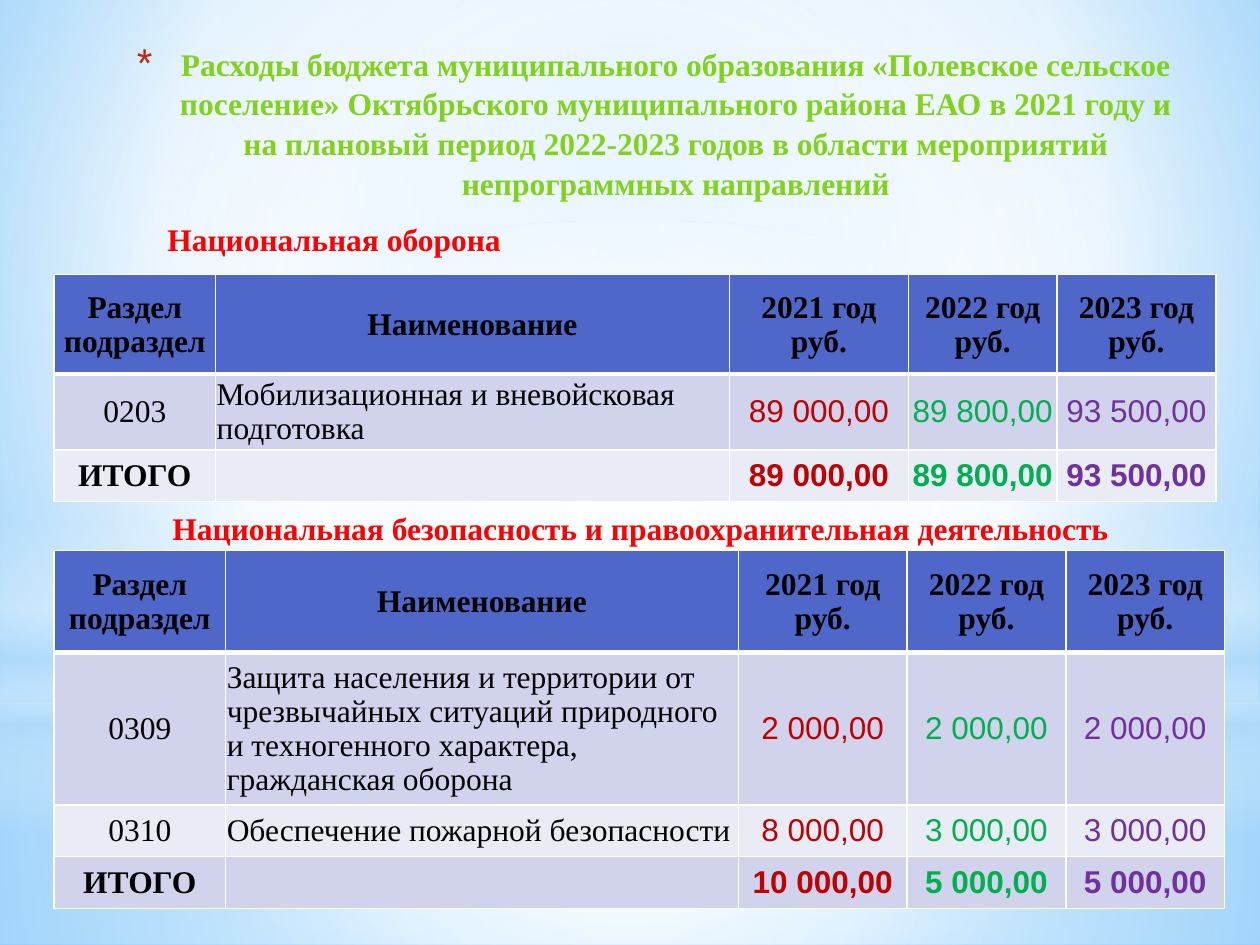
"""Builds a budget slide with two expense tables for 2021-2023."""
from pptx import Presentation
from pptx.dml.color import RGBColor
from pptx.enum.shapes import MSO_SHAPE as Shape
from pptx.enum.text import MSO_ANCHOR as Anchor, PP_ALIGN as Align
from pptx.oxml import parse_xml
from pptx.oxml.ns import nsdecls
from pptx.util import Inches, Pt

COLORS = {
    "white": "FFFFFF", "haze": "B4DCFA", "sky": "9ED5FF", "deep sky": "5BB9FF",
    "title": "81D31A", "bullet": "C3260C", "heading": "FF0000", "text": "000000",
    "header": "4E67C8", "odd row": "D0D3EB", "even row": "E9EBF5",
    "2021": "C00000", "2022": "00B050", "2023": "7030A0",
}
SERIF = "Times New Roman"


def gradient(stops, focus):
    """Return a gradient fill, radial around focus or vertical without one."""
    marks = "".join(
        f'<a:gs pos="{place * 1000}"><a:srgbClr val="{COLORS[color]}">'
        f'<a:alpha val="{opacity * 1000}"/></a:srgbClr></a:gs>'
        for place, color, opacity in stops)
    course = '<a:lin ang="5400000" scaled="0"/>'
    if focus:
        left, top, right, bottom = (side * 1000 for side in focus)
        course = (f'<a:path path="circle"><a:fillToRect l="{left}" t="{top}" '
                  f'r="{right}" b="{bottom}"/></a:path>')
    return parse_xml(f'<a:gradFill {nsdecls("a")} rotWithShape="1">'
                     f'<a:gsLst>{marks}</a:gsLst>{course}</a:gradFill>')


def style(paragraph, color, bold, align, font=SERIF):
    """Set the look of one paragraph."""
    paragraph.alignment = align
    paragraph.font.name = font
    paragraph.font.size = Pt(18)
    paragraph.font.bold = bold
    paragraph.font.color.rgb = RGBColor.from_string(COLORS[color])


prs = Presentation()
prs.slide_width, prs.slide_height = Inches(10), Inches(7.5)
slide = prs.slides.add_slide(prs.slide_layouts[6])

slide.background.fill.solid()
backdrop = slide.element.xpath(".//p:bgPr")[0]
backdrop.replace(backdrop[0], gradient(
    [(0, "sky", 100), (60, "white", 100), (100, "deep sky", 100)], (20, 10, 20, 60)))

center = (50, 50, 50, 50)
glows = [
    (Shape.RECTANGLE, 5.58, 1.92, center,
     [(0, "white", 91), (37, "white", 76), (100, "haze", 79)]),
    (Shape.RECTANGLE, 0, 5.58, center,
     [(0, "white", 89), (48, "white", 62), (100, "haze", 79)]),
    (Shape.RECTANGLE, 4.12, 2.5, None,
     [(0, "white", 0), (29, "white", 30), (45, "haze", 40),
      (55, "white", 26), (65, "haze", 60), (100, "white", 0)]),
    (Shape.OVAL, 1.75, 5.58, center, [(0, "white", 100), (56, "white", 0)]),
]
for outline, top, height, focus, stops in glows:
    glow = slide.shapes.add_shape(outline, 0, Inches(top), Inches(10), Inches(height))
    glow.shadow.inherit = False
    glow.line.fill.background()
    glow.element.spPr.insert(2, gradient(stops, focus))

captions = [
    (0.83, 0.29, 8.74, 1.25, "title", Align.CENTER, 0.35, -0.35,
     "Расходы бюджета муниципального образования «Полевское сельское поселение» "
     "Октябрьского муниципального района ЕАО в 2021 году и на плановый период "
     "2022-2023 годов в области мероприятий непрограммных направлений"),
    (1.14, 1.7, 3.54, 0.4, "heading", Align.LEFT, 0.09, 0, "Национальная оборона"),
    (1.18, 3.99, 8.11, 0.4, "heading", Align.LEFT, 0.09, 0,
     "Национальная безопасность и правоохранительная деятельность"),
]
for left, top, width, height, color, align, margin, indent, wording in captions:
    caption = slide.shapes.add_textbox(
        Inches(left), Inches(top), Inches(width), Inches(height)).text_frame
    caption.word_wrap = True
    caption.text = wording
    line = caption.paragraphs[0]
    style(line, color, True, align)
    layout = line._p.get_or_add_pPr()
    layout.set("marL", str(Inches(margin)))
    layout.set("indent", str(Inches(indent)))
    if color == "title":
        caption.margin_right = Inches(0.12)
        line.line_spacing = 1.05
        bullet = (f'<a:buClr {{0}}><a:srgbClr val="{COLORS["bullet"]}"/></a:buClr>',
                  '<a:buSzPct {0} val="128000"/>',
                  '<a:buFont {0} typeface="Arial"/>',
                  '<a:buChar {0} char="*"/>')
        for place, part in enumerate(bullet, 1):
            layout.insert(place, parse_xml(part.format(nsdecls("a"))))

tables = [
    (2.18, [1.28, 4.08, 1.42, 1.18, 1.26], [0.79, 0.6, 0.41], [
        ["Раздел подраздел", "Наименование", "2021 год\nруб.", "2022 год руб.", "2023 год руб."],
        ["0203", "Мобилизационная и вневойсковая подготовка",
         "89 000,00", "89 800,00", "93 500,00"],
        ["ИТОГО", "", "89 000,00", "89 800,00", "93 500,00"]]),
    (4.37, [1.36, 4.07, 1.34, 1.26, 1.26], [0.81, 1.21, 0.41, 0.41], [
        ["Раздел подраздел", "Наименование", "2021 год руб.", "2022 год руб.", "2023 год руб."],
        ["0309", "Защита населения и территории от чрезвычайных ситуаций природного "
         "и техногенного характера, гражданская оборона",
         "2 000,00", "2 000,00", "2 000,00"],
        ["0310", "Обеспечение пожарной безопасности", "8 000,00", "3 000,00", "3 000,00"],
        ["ИТОГО", "", "10 000,00", "5 000,00", "5 000,00"]]),
]
column_colors = ["text", "text", "2021", "2022", "2023"]
for top, widths, heights, expenses in tables:
    budget = slide.shapes.add_table(
        len(heights), len(widths), Inches(0.43), Inches(top),
        Inches(sum(widths)), Inches(sum(heights))).table
    for column, width in zip(budget.columns, widths):
        column.width = Inches(width)
    for row, height in zip(budget.rows, heights):
        row.height = Inches(height)
    for r, entries in enumerate(expenses):
        for c, entry in enumerate(entries):
            cell = budget.cell(r, c)
            cell.text = entry
            cell.vertical_anchor = Anchor.MIDDLE
            cell.margin_left = cell.margin_right = cell.margin_top = Inches(0.01)
            cell.margin_bottom = 0
            band = "header" if r == 0 else "odd row" if r % 2 else "even row"
            cell.fill.solid()
            cell.fill.fore_color.rgb = RGBColor.from_string(COLORS[band])
            is_amount = r > 0 and c > 1
            for line in cell.text_frame.paragraphs:
                style(line, column_colors[c] if is_amount else "text",
                      r in (0, len(expenses) - 1),
                      Align.LEFT if r and c == 1 else Align.CENTER,
                      "Arial" if is_amount else SERIF)
                line.line_spacing = 0.97
            for place, side in enumerate("LRTB"):
                thick = (r, side) in ((0, "B"), (1, "T"))
                cell._tc.get_or_add_tcPr().insert(place, parse_xml(
                    f'<a:ln{side} {nsdecls("a")} w="{Pt(3 if thick else 1)}"><a:solidFill>'
                    f'<a:srgbClr val="{COLORS["white"]}"/></a:solidFill></a:ln{side}>'))

prs.save("out.pptx")
